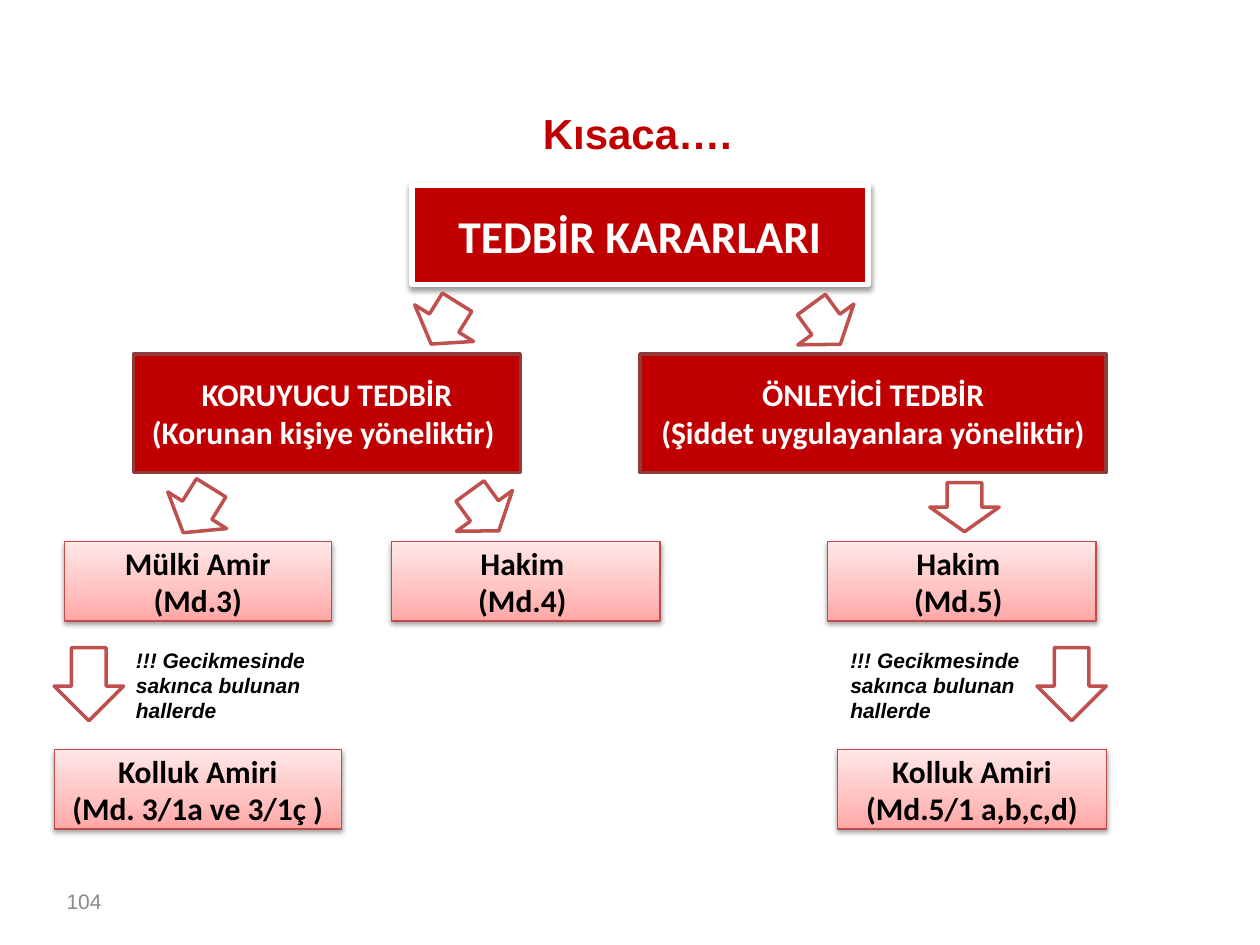
"""Build the slide that sums up the kinds of injunction decisions."""
from dataclasses import dataclass

from lxml import etree
from pptx import Presentation
from pptx.dml import color as dml
from pptx.enum import shapes, text
from pptx.oxml import ns
from pptx.util import Pt

PX = 9144
COLORS = {
    "red": "C00000", "dark_red": "8E3B39", "arrow": "C0504D", "pink_line": "BF4C48",
    "white": "FFFFFF", "black": "000000", "gray": "898989",
}
PINK_STOPS = ((0, "FFA6A5"), (35, "FFC0BF"), (100, "FFE7E7"))
ROW_Y, ROW_H = 430, 63
POLICE_Y = 595
NOTE = "!!! Gecikmesinde sakınca bulunan hallerde"


@dataclass(frozen=True)
class Style:
    fill: str | None
    line: str
    line_width: float
    font_color: str
    size: int
    shadow: bool


@dataclass(frozen=True)
class Box:
    left: int
    top: int
    width: int
    height: int
    lines: tuple[str, ...]
    style: Style


@dataclass(frozen=True)
class Arrow:
    left: int
    top: int
    height: int = 39
    rotation: float = 0


@dataclass(frozen=True)
class Label:
    left: int
    top: int
    width: int
    height: int
    words: str
    size: int
    color: str
    bold: bool = True
    italic: bool = False
    anchor: text.MSO_ANCHOR = text.MSO_ANCHOR.TOP
    align: text.PP_ALIGN = text.PP_ALIGN.LEFT
    spacing: float = 1.0


HEAD = Style("red", "white", 3, "white", 26, True)
BRANCH = Style("red", "dark_red", 2, "white", 18, False)
OFFICE = Style(None, "pink_line", 0.75, "black", 18, True)

BOXES = (
    Box(327, 147, 362, 79, ("TEDBİR KARARLARI",), HEAD),
    Box(508, 281, 370, 94, ("ÖNLEYİCİ TEDBİR", "(Şiddet uygulayanlara yöneliktir)"), BRANCH),
    Box(106, 281, 307, 94, ("KORUYUCU TEDBİR", "(Korunan kişiye yöneliktir) "), BRANCH),
    Box(51, ROW_Y, 212, ROW_H, ("Mülki Amir", "(Md.3)"), OFFICE),
    Box(311, ROW_Y, 213, ROW_H, ("Hakim ", "(Md.4) "), OFFICE),
    Box(657, ROW_Y, 213, ROW_H, ("Hakim ", "(Md.5) "), OFFICE),
    Box(43, POLICE_Y, 228, ROW_H, ("Kolluk Amiri", "(Md. 3/1a ve 3/1ç )"), OFFICE),
    Box(665, POLICE_Y, 213, ROW_H, ("Kolluk Amiri", "(Md.5/1 a,b,c,d)"), OFFICE),
)
ARROWS = (
    Arrow(325, 237, rotation=31.9),
    Arrow(628, 238, rotation=323.9),
    Arrow(129, 384, 42, 31.9),
    Arrow(357, 386, rotation=323.9),
    Arrow(738, 383),
    Arrow(43, 514, 58),
    Arrow(823, 514, 58),
)
LABELS = (
    Label(43, 695, 233, 40, "104", 12, "gray", bold=False, anchor=text.MSO_ANCHOR.MIDDLE),
    Label(421, 60, 173, 71, "Kısaca….", 24, "red", align=text.PP_ALIGN.JUSTIFY, spacing=1.5),
    Label(98, 509, 165, 71, NOTE, 12, "black", italic=True),
    Label(665, 509, 165, 71, NOTE, 12, "black", italic=True),
)


def rgb(name: str) -> dml.RGBColor:
    """Return the named colour."""
    return dml.RGBColor.from_string(COLORS[name])


def add_color(parent, value: str):
    """Append a colour element to an XML parent."""
    return etree.SubElement(parent, ns.qn("a:srgbClr"), val=value)


def fill_pink(shape) -> None:
    """Fill a shape with the three-stop pink gradient, darkest at the bottom."""
    shape.fill.gradient()
    shape.fill.gradient_angle = 90
    stops = shape._element.spPr.find(".//" + ns.qn("a:gsLst"))
    for stop in list(stops):
        stops.remove(stop)
    for percent, value in PINK_STOPS:
        add_color(etree.SubElement(stops, ns.qn("a:gs"), pos=str(percent * 1000)), value)


def add_shadow(shape) -> None:
    """Give a shape a soft shadow below it."""
    effects = shape._element.spPr.find(ns.qn("a:effectLst"))
    shadow = etree.SubElement(
        effects, ns.qn("a:outerShdw"), blurRad=str(Pt(3.1)), dist=str(Pt(1.6)),
        dir="5400000", rotWithShape="0")
    etree.SubElement(add_color(shadow, COLORS["black"]), ns.qn("a:alpha"), val="38000")


def add_span(para, words: str, font: str, size: int, color: str, bold: bool, italic: bool = False) -> None:
    """Add one formatted run to a paragraph."""
    span = para.add_run()
    span.text = words
    span.font.name = font
    span.font.size = Pt(size)
    span.font.bold = bold
    span.font.italic = italic
    span.font.color.rgb = rgb(color)


def add_outlined(page, kind, item: Box | Arrow, width: int, line: str, line_width: float):
    """Add a preset shape with its outline and no inherited shadow."""
    shape = page.shapes.add_shape(kind, item.left * PX, item.top * PX, width * PX, item.height * PX)
    shape.shadow.inherit = False
    shape.line.color.rgb = rgb(line)
    shape.line.width = Pt(line_width)
    return shape


def draw_box(page, box: Box) -> None:
    """Draw one box of the chart with its centred lines."""
    style = box.style
    shape = add_outlined(page, shapes.MSO_SHAPE.RECTANGLE, box, box.width, style.line, style.line_width)
    if style.fill:
        shape.fill.solid()
        shape.fill.fore_color.rgb = rgb(style.fill)
    else:
        fill_pink(shape)
    if style.shadow:
        add_shadow(shape)
    frame = shape.text_frame
    frame.word_wrap = True
    frame.vertical_anchor = text.MSO_ANCHOR.MIDDLE
    for index, words in enumerate(box.lines):
        para = frame.add_paragraph() if index else frame.paragraphs[0]
        para.alignment = text.PP_ALIGN.CENTER
        add_span(para, words, "Calibri", style.size, style.font_color, True)


def draw_arrow(page, arrow: Arrow) -> None:
    """Draw one hollow block arrow."""
    shape = add_outlined(page, shapes.MSO_SHAPE.DOWN_ARROW, arrow, 55, "arrow", 2)
    shape.fill.solid()
    shape.fill.fore_color.rgb = rgb("white")
    shape.rotation = arrow.rotation


def draw_label(page, label: Label) -> None:
    """Draw one free text."""
    frame = page.shapes.add_textbox(
        label.left * PX, label.top * PX, label.width * PX, label.height * PX).text_frame
    frame.word_wrap = True
    frame.vertical_anchor = label.anchor
    para = frame.paragraphs[0]
    para.alignment = label.align
    para.line_spacing = label.spacing
    add_span(para, label.words, "Arial", label.size, label.color, label.bold, label.italic)


def main() -> None:
    """Build and save the deck."""
    deck = Presentation()
    deck.slide_width, deck.slide_height = 1000 * PX, 750 * PX
    page = deck.slides.add_slide(deck.slide_layouts[6])
    for draw, items in ((draw_box, BOXES), (draw_arrow, ARROWS), (draw_label, LABELS)):
        for item in items:
            draw(page, item)
    deck.save("out.pptx")


if __name__ == "__main__":
    main()
